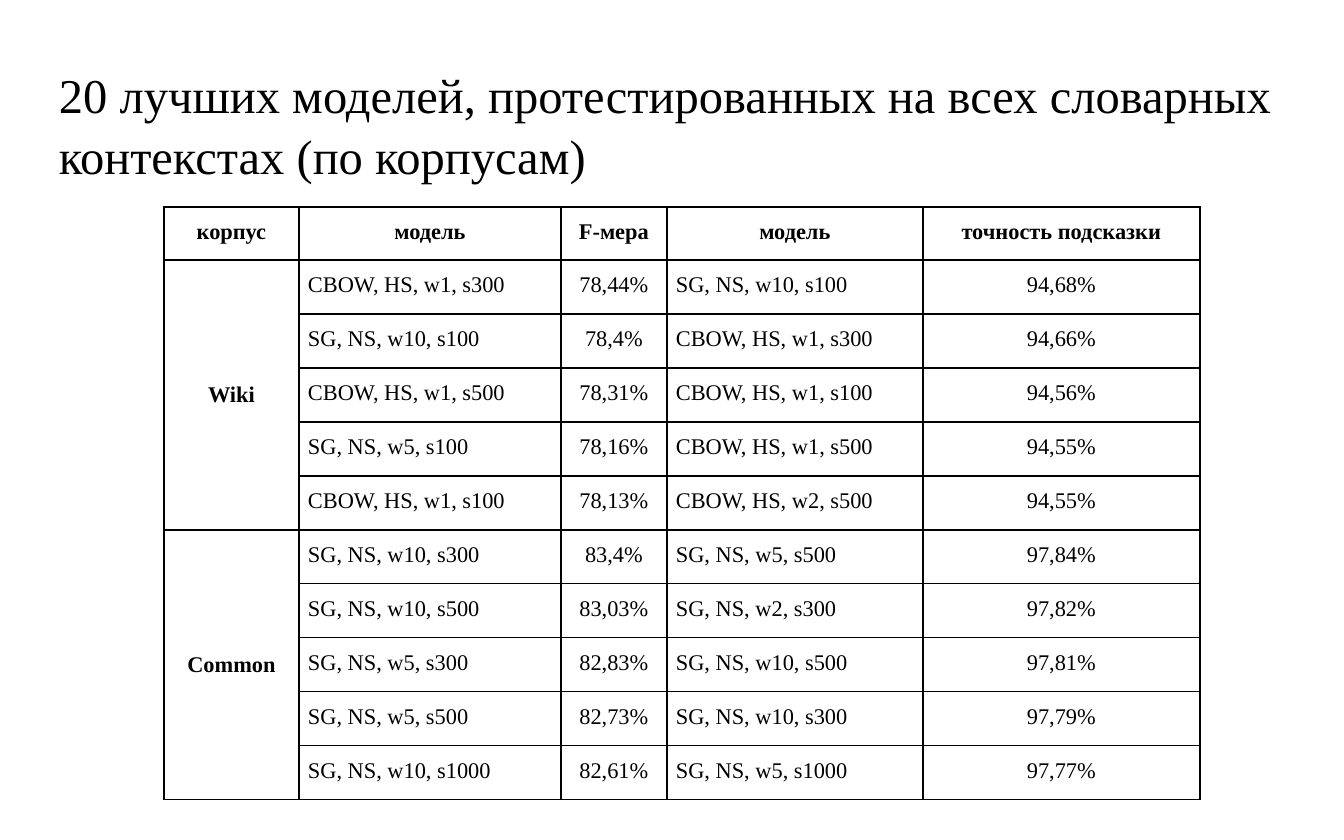
from pptx import Presentation
from pptx.dml.color import RGBColor
from pptx.enum.text import MSO_ANCHOR, PP_ALIGN
from pptx.oxml import parse_xml
from pptx.oxml.ns import nsdecls
from pptx.util import Pt

SCALE = 914400 / 134.4
THEME = {"font": "Times New Roman", "ink": "000000", "title": 26, "body": 12, "border": 1}


def px(n):
    return round(n * SCALE)


def write(tf, text, size=THEME["body"], bold=False, align=PP_ALIGN.LEFT, spacing=None):
    p = tf.paragraphs[0]
    p.alignment = align
    p.line_spacing = spacing
    r = p.add_run()
    r.text = text
    r.font.name = THEME["font"]
    r.font.size = Pt(size)
    r.font.bold = bold
    r.font.color.rgb = RGBColor.from_string(THEME["ink"])


prs = Presentation()
prs.slide_width, prs.slide_height = px(1344), px(840)
s = prs.slides.add_slide(prs.slide_layouts[6])

# Title
tf = s.shapes.add_textbox(px(46), px(47), px(1253), px(94)).text_frame
tf.word_wrap = True
tf.margin_left = tf.margin_right = tf.margin_bottom = px(13)
tf.margin_top = px(16)
write(tf, "20 лучших моделей, протестированных на всех словарных контекстах (по корпусам)",
      size=THEME["title"], spacing=1.04)

# Table content
HEADER = ["корпус", "модель", "F-мера", "модель", "точность подсказки"]
CORPORA = {
    "Wiki": [
        ("CBOW, HS, w1, s300", "78,44%", "SG, NS, w10, s100", "94,68%"),
        ("SG, NS, w10, s100", "78,4%", "CBOW, HS, w1, s300", "94,66%"),
        ("CBOW, HS, w1, s500", "78,31%", "CBOW, HS, w1, s100", "94,56%"),
        ("SG, NS, w5, s100", "78,16%", "CBOW, HS, w1, s500", "94,55%"),
        ("CBOW, HS, w1, s100", "78,13%", "CBOW, HS, w2, s500", "94,55%"),
    ],
    "Common": [
        ("SG, NS, w10, s300", "83,4%", "SG, NS, w5, s500", "97,84%"),
        ("SG, NS, w10, s500", "83,03%", "SG, NS, w2, s300", "97,82%"),
        ("SG, NS, w5, s300", "82,83%", "SG, NS, w10, s500", "97,81%"),
        ("SG, NS, w5, s500", "82,73%", "SG, NS, w10, s300", "97,79%"),
        ("SG, NS, w10, s1000", "82,61%", "SG, NS, w5, s1000", "97,77%"),
    ],
}
COLS = [135, 262, 106, 256, 277]
ROWS = [52] + [54] * sum(len(models) for models in CORPORA.values())

# Table grid
table = s.shapes.add_table(len(ROWS), len(COLS), px(164), px(207),
                           px(sum(COLS)), px(sum(ROWS))).table
table.first_row = table.horz_banding = False
for col, width in zip(table.columns, COLS):
    col.width = px(width)
for row, height in zip(table.rows, ROWS):
    row.height = px(height)

# Cell margins, fill and borders
for cell in table.iter_cells():
    cell.margin_left = cell.margin_right = px(9)
    cell.margin_top = cell.margin_bottom = px(13)
    tcPr = cell._tc.get_or_add_tcPr()
    for side in ("lnL", "lnR", "lnT", "lnB"):
        tcPr.append(parse_xml(
            f'<a:{side} {nsdecls("a")} w="{Pt(THEME["border"])}"><a:solidFill>'
            f'<a:srgbClr val="{THEME["ink"]}"/></a:solidFill></a:{side}>'))
    cell.fill.background()

# Header row
for c, text in enumerate(HEADER):
    write(table.cell(0, c).text_frame, text, bold=True, align=PP_ALIGN.CENTER)

# One merged corpus cell beside its five models
top = 1
for corpus, models in CORPORA.items():
    cell = table.cell(top, 0)
    cell.merge(table.cell(top + len(models) - 1, 0))
    cell.vertical_anchor = MSO_ANCHOR.MIDDLE
    write(cell.text_frame, corpus, bold=True, align=PP_ALIGN.CENTER)
    for r, values in enumerate(models, top):
        for c, text in enumerate(values, 1):
            align = PP_ALIGN.LEFT if c % 2 else PP_ALIGN.CENTER
            write(table.cell(r, c).text_frame, text, align=align)
    top += len(models)

prs.save("out.pptx")
